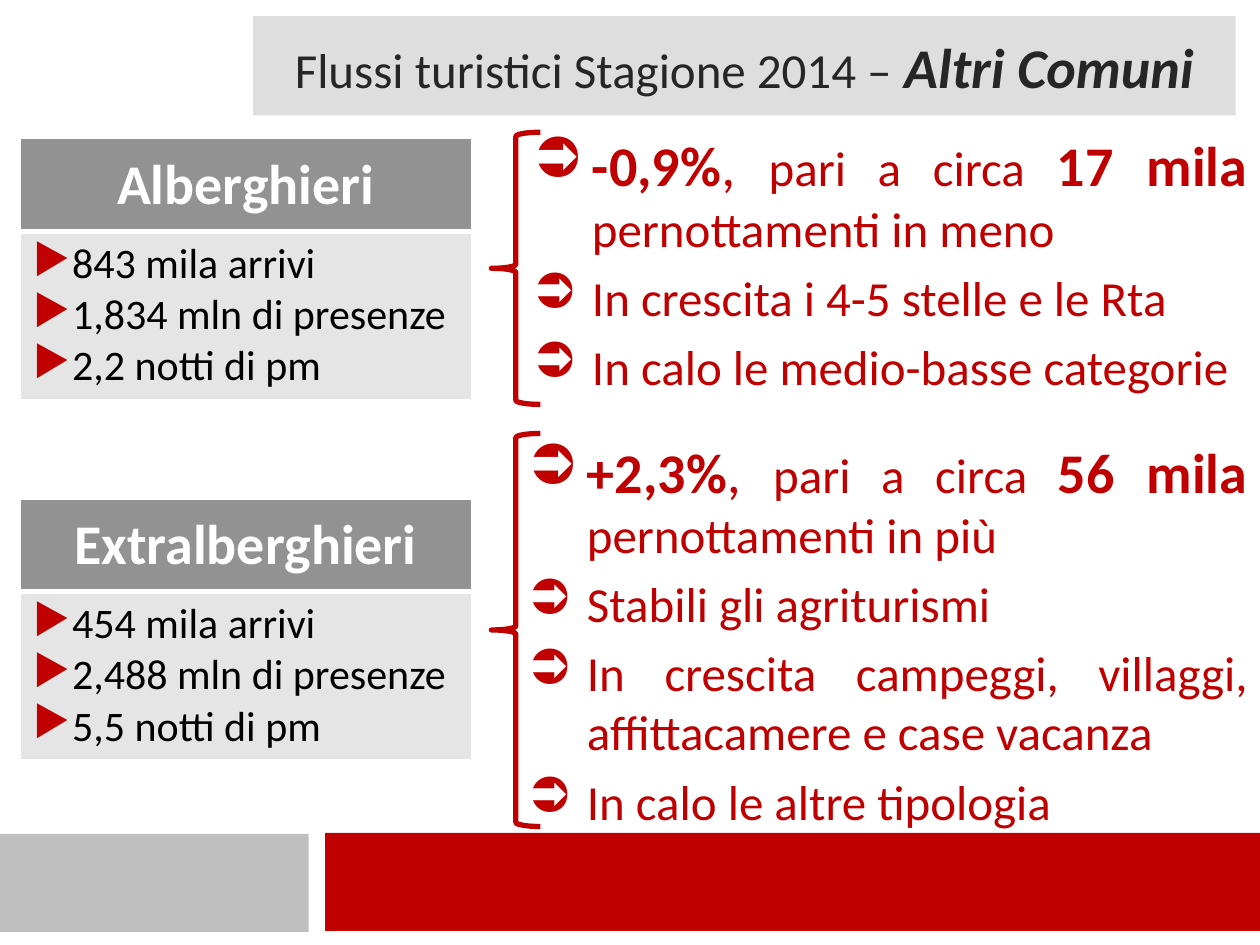
from lxml import etree
from pptx import Presentation
from pptx.dml.color import RGBColor
from pptx.enum import shapes, text
from pptx.oxml import ns
from pptx.util import Pt

COLORS = {"red": "C00000", "silver": "BFBFBF", "dark": "262626",
          "pale": "CCCCCC", "white": "FFFFFF", "black": "000000"}
RGB = {name: RGBColor.from_string(value) for name, value in COLORS.items()}


def fade(props):
    color = props.find(ns.qn("a:solidFill")).find(ns.qn("a:srgbClr"))
    etree.SubElement(color, ns.qn("a:alpha"), val="50000")


def add_bullet(paragraph, char, margin, hanging):
    props = paragraph._p.get_or_add_pPr()
    props.set("marL", str(Pt(margin)))
    props.set("indent", str(-Pt(hanging)))
    color = etree.SubElement(props, ns.qn("a:buClr"))
    etree.SubElement(color, ns.qn("a:srgbClr"), val=COLORS["red"])
    etree.SubElement(props, ns.qn("a:buChar"), char=char)


prs = Presentation()
prs.slide_width, prs.slide_height = Pt(720), Pt(540)
slide = prs.slides.add_slide(prs.slide_layouts[5])

for left, top, width, color in [(0, 476.6, 176.4, "silver"), (185.8, 476, 534.2, "red")]:
    bar = slide.shapes.add_shape(shapes.MSO_SHAPE.RECTANGLE,
                                 Pt(left), Pt(top), Pt(width), Pt(56))
    bar.shadow.inherit = False
    bar.fill.solid()
    bar.fill.fore_color.rgb = RGB[color]
    bar.line.fill.background()

title = slide.shapes.title
title.left, title.top, title.width, title.height = Pt(144.7), Pt(9.2), Pt(561.4), Pt(56.8)
title.fill.solid()
title.fill.fore_color.rgb = RGB["silver"]
fade(title._element.spPr)
title.text_frame.vertical_anchor = text.MSO_ANCHOR.MIDDLE
heading = title.text_frame.paragraphs[0]
heading.alignment = text.PP_ALIGN.CENTER
for words, size, strong in [("Flussi turistici Stagione 2014 –", 28, False),
                            (" Altri Comuni", 32, True)]:
    run = heading.add_run()
    run.text = words
    run.font.name, run.font.size = "Calibri", Pt(size)
    run.font.bold = run.font.italic = strong
    run.font.color.rgb = RGB["dark"]

sectors = [
    {"name": "Alberghieri", "top": 79.2,
     "figures": ["843 mila arrivi", "1,834 mln di presenze", "2,2 notti di pm"],
     "brace": (75.6, 155.5), "notes": (297.4, 71.3, 159.8),
     "change": "-0,9%", "nights": "17 mila ", "outcome": "pernottamenti in meno",
     "trends": ["In crescita i 4-5 stelle e le Rta", "In calo le medio-basse categorie"]},
    {"name": "Extralberghieri", "top": 285.1,
     "figures": ["454 mila arrivi", "2,488 mln di presenze", "5,5 notti di pm"],
     "brace": (247.7, 224.6), "notes": (294.5, 246.2, 234),
     "change": "+2,3%", "nights": "56 mila ", "outcome": "pernottamenti in più",
     "trends": ["Stabili gli agriturismi",
                "In crescita campeggi, villaggi, affittacamere e case vacanza",
                "In calo le altre tipologia"]},
]

for sector in sectors:
    table = slide.shapes.add_table(2, 1, Pt(11.7), Pt(sector["top"]),
                                   Pt(257.6), Pt(149)).table
    table.rows[0].height, table.rows[1].height = Pt(53), Pt(96)
    rows = [(sector["name"], "dark", "white", 32, 3),
            ("\n".join(sector["figures"]), "pale", "black", 24, 1)]
    for index, (words, back, ink, size, bottom) in enumerate(rows):
        cell = table.cell(index, 0)
        cell.text_frame.text = words
        cell.vertical_anchor = text.MSO_ANCHOR.MIDDLE
        props = cell._tc.get_or_add_tcPr()
        top = 1 if index == 0 else 3
        for side, weight in [("L", 1), ("R", 1), ("T", top), ("B", bottom)]:
            border = etree.SubElement(props, ns.qn("a:ln" + side), w=str(Pt(weight)))
            paint = etree.SubElement(border, ns.qn("a:solidFill"))
            etree.SubElement(paint, ns.qn("a:srgbClr"), val=COLORS["white"])
        cell.fill.solid()
        cell.fill.fore_color.rgb = RGB[back]
        fade(props)
        for paragraph in cell.text_frame.paragraphs:
            if index == 0:
                paragraph.alignment = text.PP_ALIGN.CENTER
            else:
                add_bullet(paragraph, "▶", 21.6, 21.6)
            font = paragraph.runs[0].font
            font.name, font.size, font.bold = "Calibri", Pt(size), index == 0
            font.color.rgb = RGB[ink]

    brace_top, brace_height = sector["brace"]
    brace = slide.shapes.add_shape(shapes.MSO_SHAPE.LEFT_BRACE, Pt(280.8),
                                   Pt(brace_top), Pt(28), Pt(brace_height))
    brace.shadow.inherit = False
    brace.fill.background()
    brace.line.color.rgb = RGB["red"]
    brace.line.width = Pt(3)

    left, top, height = sector["notes"]
    notes = slide.shapes.add_textbox(Pt(left), Pt(top), Pt(720 - left), Pt(height)).text_frame
    notes.word_wrap = True
    notes.auto_size = text.MSO_AUTO_SIZE.SHAPE_TO_FIT_TEXT
    summary = [(sector["change"], 32, True), (", ", 32, False), ("pari a circa ", 28, False),
               (sector["nights"], 32, True), (sector["outcome"], 28, False)]
    points = [summary] + [[(trend, 28, False)] for trend in sector["trends"]]
    for index, point in enumerate(points):
        paragraph = notes.add_paragraph() if index else notes.paragraphs[0]
        paragraph.alignment = text.PP_ALIGN.JUSTIFY
        paragraph.space_after = Pt(6)
        add_bullet(paragraph, "➲", 33.8, 36)
        for words, size, bold in point:
            run = paragraph.add_run()
            run.text = words
            run.font.name, run.font.size, run.font.bold = "Calibri", Pt(size), bold
            run.font.color.rgb = RGB["red"]

prs.save("out.pptx")
